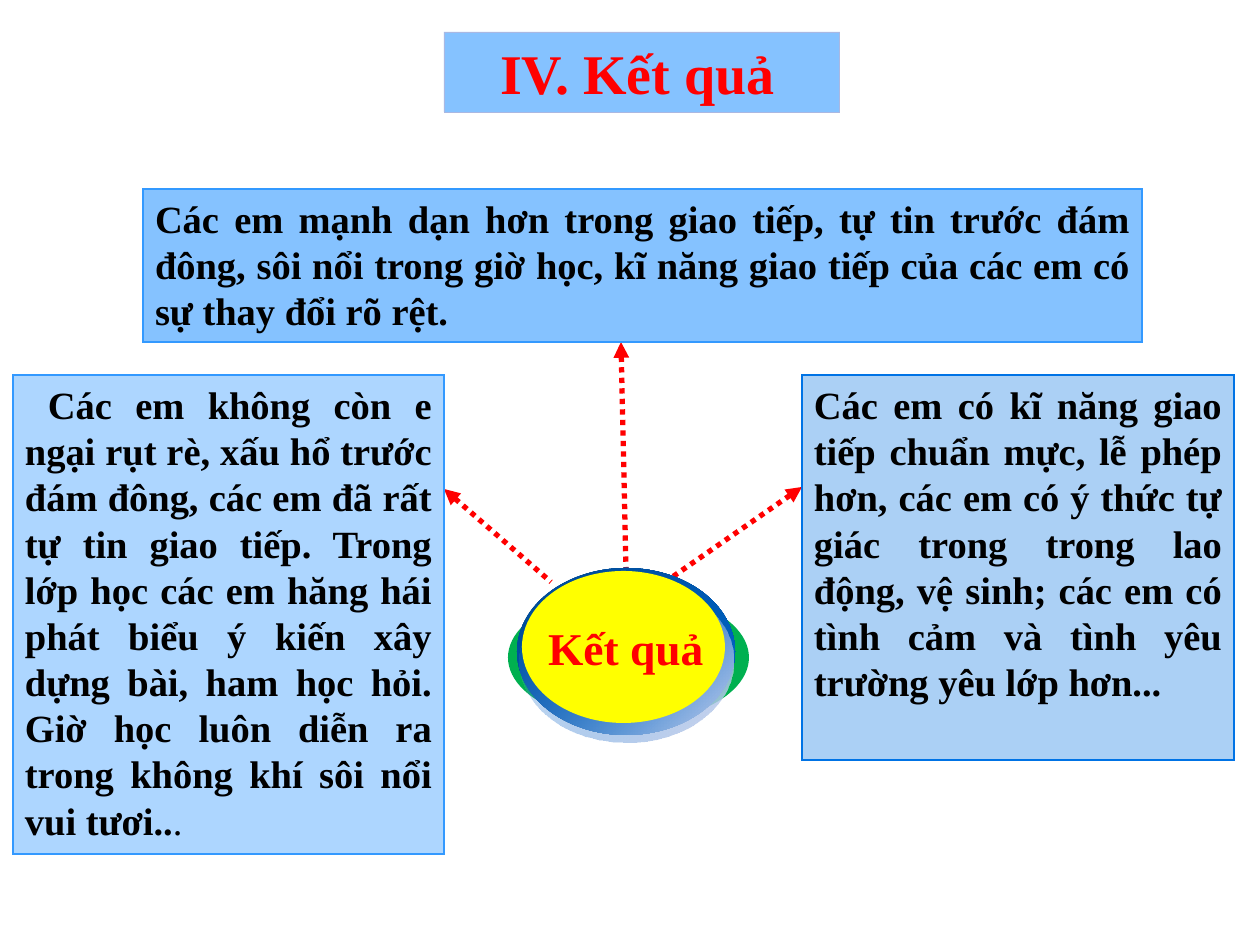
from lxml import etree
from pptx import Presentation
from pptx import util as u
from pptx.dml.color import RGBColor
from pptx.enum import dml, shapes, text
from pptx.oxml.ns import qn

SCALE = u.Inches(1) / 126
FONT = "Times New Roman"
COLORS = {
    "red": "FF0000", "black": "000000", "yellow": "FFFF00", "green": "00B050",
    "box": "85C2FF", "left_box": "ADD6FF", "right_box": "ABD0F5",
    "border": "3399FF", "right_border": "0073E5", "title_border": "AAB8E2",
    "navy": "004992", "blue": "0066CC", "pale": "D4D9EF",
}


def px(length):
    """Turn pixels into EMU."""
    return u.Emu(round(length * SCALE))


def color(name):
    """Look up a named colour."""
    return RGBColor.from_string(COLORS[name])


def write(shape, runs, size, ink, align, insets=(12, 6, 12, 6), indent=0):
    """Fill a shape with one paragraph of (wording, bold) runs."""
    frame = shape.text_frame
    frame.word_wrap = True
    frame.vertical_anchor = text.MSO_ANCHOR.TOP
    (frame.margin_left, frame.margin_top,
     frame.margin_right, frame.margin_bottom) = map(px, insets)
    paragraph = frame.paragraphs[0]
    paragraph.alignment = align
    if indent:
        paragraph._p.get_or_add_pPr().set("indent", str(px(indent)))
    for wording, bold in runs:
        run = paragraph.add_run()
        run.text = wording
        run.font.name = FONT
        run.font.size = u.Pt(size)
        run.font.bold = bold
        run.font.color.rgb = color(ink)


def add_box(slide, bounds, fill, border, width):
    """Add a bordered rectangle with sharp corners."""
    box = slide.shapes.add_shape(shapes.MSO_SHAPE.RECTANGLE, *map(px, bounds))
    box.shadow.inherit = False
    box.fill.solid()
    box.fill.fore_color.rgb = color(fill)
    box.line.color.rgb = color(border)
    box.line.width = u.Pt(width)
    etree.SubElement(box.line._get_or_add_ln(), qn("a:miter"), lim="800000")
    return box


def add_statement(slide, bounds, fill, border, width, runs, indent=0):
    """Add a box holding one justified statement."""
    box = add_box(slide, bounds, fill, border, width)
    write(box, runs, 22, "black", text.PP_ALIGN.JUSTIFY, indent=indent)


def add_arrow(slide, tip, tail):
    """Add a dotted red line with its arrowhead at the tip."""
    arrow = slide.shapes.add_connector(
        shapes.MSO_CONNECTOR.STRAIGHT, *map(px, tip + tail))
    arrow.line.color.rgb = color("red")
    arrow.line.width = u.Pt(3)
    arrow.line.dash_style = dml.MSO_LINE.ROUND_DOT
    line = arrow.line._get_or_add_ln()
    etree.SubElement(line, qn("a:headEnd"), type="triangle")
    etree.SubElement(arrow._element.spPr, qn("a:effectLst"))


def add_ellipse(group, bounds, *fills, clear_start=False):
    """Add an ellipse with a solid fill or a two-stop diagonal gradient."""
    ellipse = group.shapes.add_shape(shapes.MSO_SHAPE.OVAL, *map(px, bounds))
    ellipse.shadow.inherit = False
    ellipse.line.fill.background()
    if len(fills) == 1:
        ellipse.fill.solid()
        ellipse.fill.fore_color.rgb = color(fills[0])
        return
    ellipse.fill.gradient()
    ellipse.fill.gradient_angle = 315
    for stop, name in zip(ellipse.fill.gradient_stops, fills):
        stop.color.rgb = color(name)
    if clear_start:
        first = ellipse._element.spPr.find(".//" + qn("a:srgbClr"))
        etree.SubElement(first, qn("a:alpha"), val="0")


def add_hub(slide):
    """Add the layered button in the centre with its label."""
    hub = slide.shapes.add_group_shape()
    add_ellipse(hub, (508, 592, 241, 131), "green")
    add_ellipse(hub, (517, 568, 218, 167), "navy", "blue")
    add_ellipse(hub, (520, 580, 213, 163), "blue", "pale", clear_start=True)
    add_ellipse(hub, (522, 571, 203, 152), "yellow")
    label = hub.shapes.add_textbox(*map(px, (532, 614, 188, 68)))
    write(label, [("Kết quả", True)], 26, "red", text.PP_ALIGN.CENTER)


def main():
    """Build and save the results slide."""
    presentation = Presentation()
    presentation.slide_width, presentation.slide_height = px(1260), px(945)
    slide = presentation.slides.add_slide(presentation.slide_layouts[6])

    for tip, tail in (((444, 489), (551, 582)),
                      ((802, 487), (668, 580)),
                      ((621, 342), (626, 568))):
        add_arrow(slide, tip, tail)

    add_statement(slide, (13, 375, 431, 479), "left_box", "border", 1, [
        ("Các em không còn e ngại rụt rè, xấu hổ trước đám đông, các em đã "
         "rất tự tin giao tiếp. Trong lớp học các em hăng hái phát biểu ý "
         "kiến xây dựng bài, ham học hỏi. Giờ học luôn diễn ra trong không "
         "khí sôi nổi vui tươi..", True),
        (".", False)], indent=23)
    add_statement(slide, (143, 189, 999, 153), "box", "border", 1, [
        ("Các em mạnh dạn hơn trong giao tiếp, tự tin trước đám đông, sôi "
         "nổi trong giờ học, kĩ năng giao tiếp của các em có sự thay đổi "
         "rõ rệt.", True)])
    title = add_box(slide, (444, 32, 396, 80), "box", "title_border", 0.5)
    write(title, [("IV. Kết quả", True)], 32, "red", text.PP_ALIGN.CENTER,
          insets=(12, 6, 21, 6))
    add_hub(slide)
    add_statement(slide, (802, 375, 432, 385), "right_box", "right_border", 0.75, [
        ("Các em có kĩ năng giao tiếp chuẩn mực, lễ phép hơn, các em có ý "
         "thức tự giác trong trong lao động, vệ sinh; các em có tình cảm "
         "và tình yêu trường yêu lớp hơn...", True)])

    presentation.save("out.pptx")


if __name__ == "__main__":
    main()
